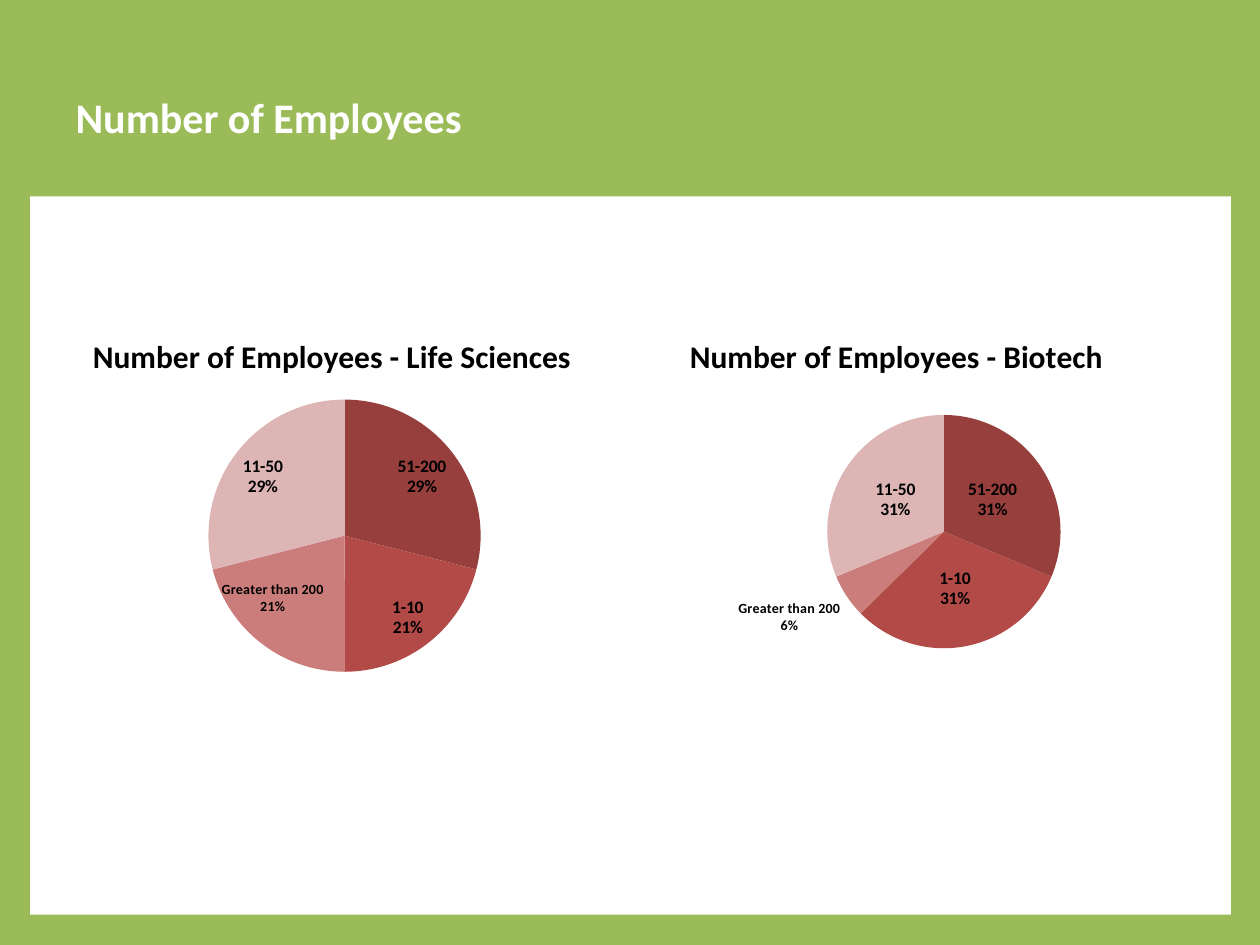
from lxml import etree
from pptx import Presentation
from pptx.chart.data import CategoryChartData
from pptx.dml.color import RGBColor
from pptx.enum.chart import XL_CHART_TYPE as ChartType, XL_LABEL_POSITION as LabelPosition
from pptx.enum.shapes import MSO_SHAPE as Shape
from pptx.enum.text import MSO_ANCHOR as Anchor, PP_ALIGN as Align
from pptx.oxml.ns import qn
from pptx.util import Inches, Pt

FONT = "Calibri"
GREEN, WHITE, BLACK = "9BBB59", "FFFFFF", "000000"
SLICE_COLOURS = ["963F3C", "B24A47", "CB7D7B", "DDB5B5"]
CATEGORIES = ["51-200", "1-10", "Greater than 200", "11-50"]
LARGEST = CATEGORIES.index("Greater than 200")


def colour(value):
    return RGBColor.from_string(value)


def style_font(font, size, fill, bold=True):
    font.name = FONT
    font.size = Pt(size)
    font.bold = bold
    font.color.rgb = colour(fill)


def add_title(slide, box, text):
    title = slide.shapes.title
    title.left, title.top, title.width, title.height = map(Inches, box)
    frame = title.text_frame
    frame.word_wrap = True
    frame.vertical_anchor = Anchor.MIDDLE
    paragraph = frame.paragraphs[0]
    paragraph.alignment = Align.LEFT
    run = paragraph.add_run()
    run.text = text
    style_font(run.font, 24, WHITE)


def add_panel(slide, box):
    panel = slide.shapes.add_shape(Shape.RECTANGLE, *map(Inches, box))
    panel.shadow.inherit = False
    panel.fill.solid()
    panel.fill.fore_color.rgb = colour(WHITE)
    panel.line.fill.background()


def show_category_and_percent(labels):
    """Show the category name above the percentage in a label element."""
    for name, shown in (("showVal", "0"), ("showCatName", "1"), ("showPercent", "1")):
        labels.find(qn("c:" + name)).set("val", shown)
    separator = etree.Element(qn("c:separator"))
    separator.text = "\n"
    labels.find(qn("c:showBubbleSize")).addnext(separator)


def add_manual_layout(parent, index, settings):
    """Give a chart part a manual layout, as its child at the given index."""
    layout = parent.find(qn("c:layout"))
    if layout is None:
        layout = etree.Element(qn("c:layout"))
        parent.insert(index, layout)
    manual = etree.SubElement(layout, qn("c:manualLayout"))
    for name, value in settings:
        etree.SubElement(manual, qn("c:" + name)).set("val", str(value))


def add_pie(slide, box, title, values, plot_box, position, largest_position,
            largest_shift=None):
    """Add a pie; plot_box and largest_shift are shares of the chart."""
    data = CategoryChartData()
    data.categories = CATEGORIES
    data.add_series("Series 1", values)
    chart = slide.shapes.add_chart(ChartType.PIE, *map(Inches, box), data).chart
    chart.has_legend = False
    style_font(chart.font, 10, BLACK, bold=False)

    # Chart title and plot area
    chart.has_title = True
    run = chart.chart_title.text_frame.paragraphs[0].add_run()
    run.text = title
    style_font(run.font, 18, BLACK)
    plot = chart.plots[0]
    plot.vary_by_categories = True
    modes = [("layoutTarget", "inner"), ("xMode", "edge"), ("yMode", "edge")]
    add_manual_layout(plot._element.getparent(), 0, modes + list(zip("xywh", plot_box)))

    # Slices
    series = plot.series[0]
    for index, fill in enumerate(SLICE_COLOURS):
        slice_format = series.points[index].format
        slice_format.fill.solid()
        slice_format.fill.fore_color.rgb = colour(fill)
        slice_format.line.fill.background()

    # Labels, with a smaller one for the longest name
    labels = series.data_labels
    labels.position = position
    style_font(labels.font, 10, BLACK)
    show_category_and_percent(labels._element)
    leader_lines = labels._element.find(qn("c:showLeaderLines"))
    if leader_lines is not None:
        leader_lines.set("val", "0")
    largest_label = series.points[LARGEST].data_label
    largest_label.position = largest_position
    style_font(largest_label.font, 8, BLACK)
    label_element = labels._element.find(qn("c:dLbl"))
    show_category_and_percent(label_element)
    if largest_shift:
        add_manual_layout(label_element, 1, zip("xy", largest_shift))


def main():
    presentation = Presentation()
    presentation.slide_width, presentation.slide_height = Inches(10), Inches(7.5)
    slide = presentation.slides.add_slide(presentation.slide_layouts[5])
    slide.background.fill.solid()
    slide.background.fill.fore_color.rgb = colour(GREEN)

    add_panel(slide, (0.24, 1.56, 9.53, 5.7))
    add_title(slide, (0.5, 0.3, 9.27, 1.25), "Number of Employees")
    add_pie(slide, (0.14, 2.5, 4.99, 2.92), "Number of Employees - Life Sciences",
            (29, 21, 21, 29), (0.04, 0.23, 0.96, 0.74),
            LabelPosition.INSIDE_END, LabelPosition.INSIDE_END, (-0.07, -0.06))
    add_pie(slide, (4.76, 2.5, 4.71, 2.94), "Number of Employees - Biotech",
            (31, 31, 6, 31), (0.38, 0.27, 0.4, 0.63),
            LabelPosition.CENTER, LabelPosition.OUTSIDE_END)
    presentation.save("out.pptx")


if __name__ == "__main__":
    main()
